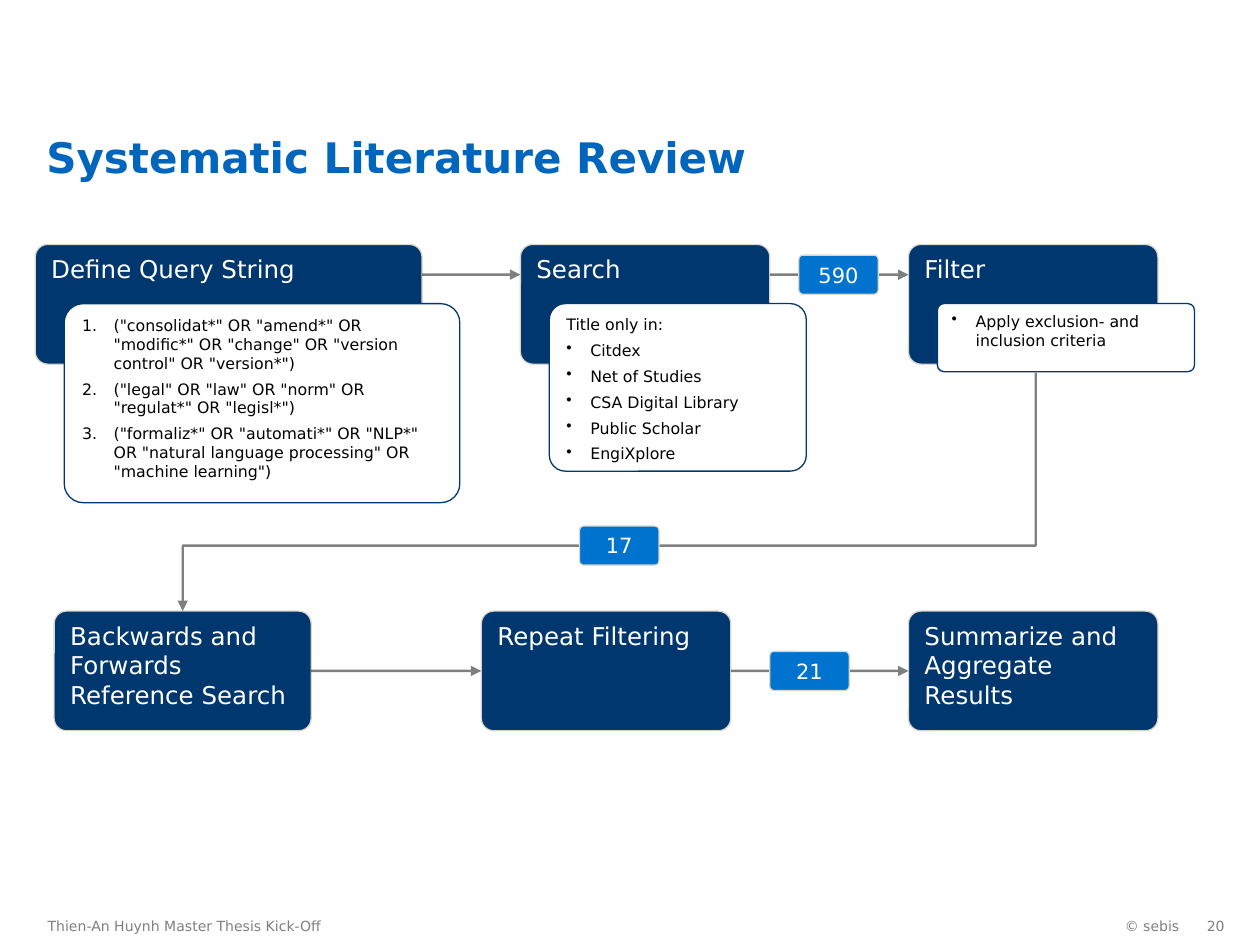
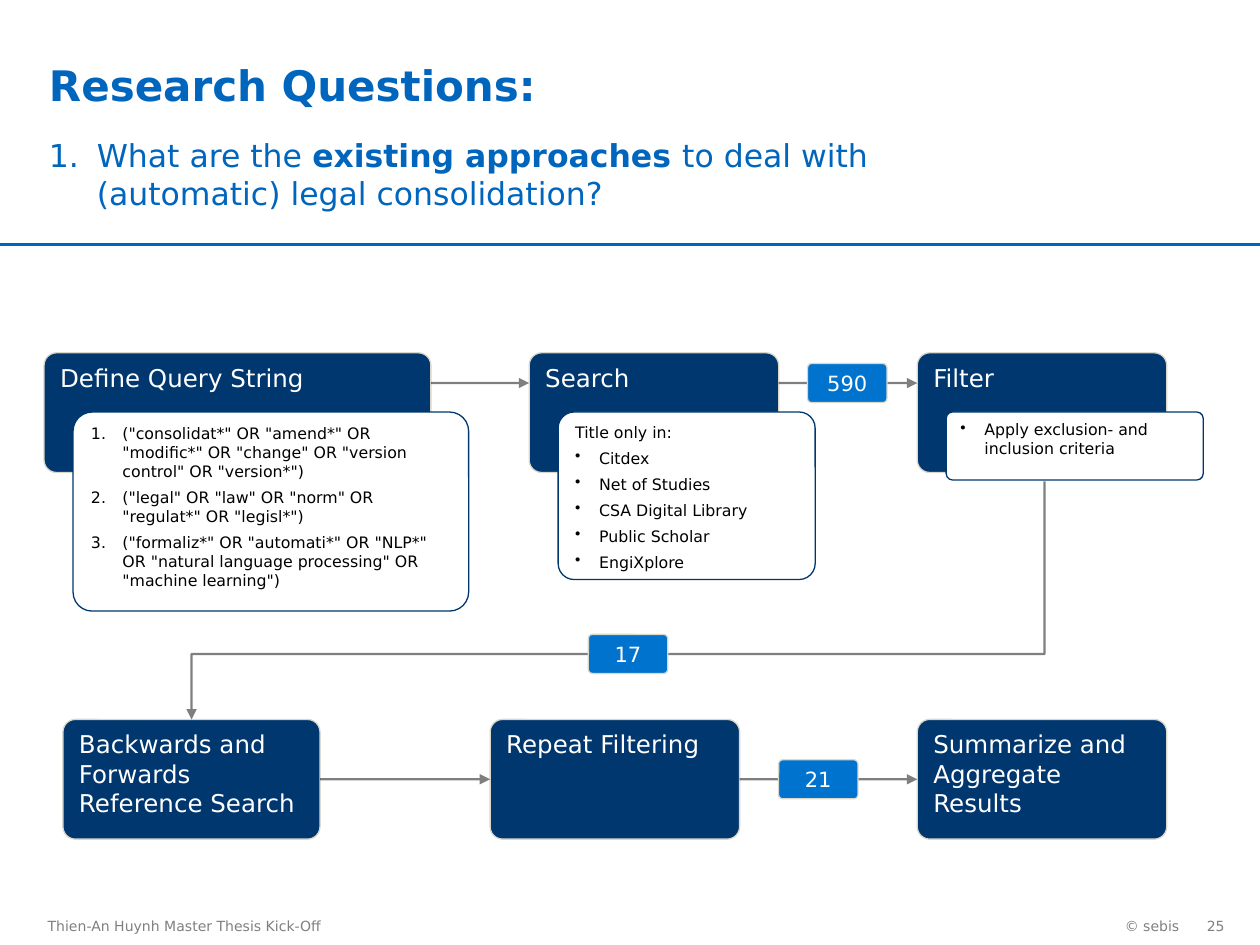
import pptx
import pptx.util
import pptx.dml.color
import pptx.enum.shapes
import pptx.enum.text
import pptx.oxml.ns
import lxml.etree

Inches = pptx.util.Inches
RGBColor = pptx.dml.color.RGBColor
ALIGN = pptx.enum.text.PP_ALIGN
ANCHOR = pptx.enum.text.MSO_ANCHOR
CONNECTOR = pptx.enum.shapes.MSO_CONNECTOR
ROUNDED = pptx.enum.shapes.MSO_SHAPE.ROUNDED_RECTANGLE
qn = pptx.oxml.ns.qn

FONT = "DejaVu Sans"
TITLE_BLUE = RGBColor(0x00, 0x65, 0xBD)
NAVY = RGBColor(0x00, 0x37, 0x6F)
BADGE_BLUE = RGBColor(0x00, 0x73, 0xCF)
SAND = RGBColor(0xDA, 0xD7, 0xCB)
GREY = RGBColor(0x80, 0x80, 0x80)
BLACK = RGBColor(0, 0, 0)
WHITE = RGBColor(0xFF, 0xFF, 0xFF)

# Diagram grid, measured from the top left corner of the first step
STEP_WIDTH, STEP_HEIGHT = 1.98, 0.95
LAST_COLUMN, COLUMN_PITCH = 6.93, 3.39
LOWER_ROW = 2.91
UPPER_FLOW, RETURN_FLOW = 0.24, 2.39
LOWER_FLOW = LOWER_ROW + STEP_HEIGHT / 2
NOTE_SHIFT = (0.23, 0.47)
NOTE_WIDTH = 2.04
BADGE_WIDTH, BADGE_HEIGHT = 0.63, 0.31

# Left, top, width, text
STEPS = [
    (0, 0, 3.07, "Define Query String"),
    (3.85, 0, STEP_WIDTH, "Search"),
    (LAST_COLUMN, 0, STEP_WIDTH, "Filter"),
    (LAST_COLUMN - 2 * COLUMN_PITCH, LOWER_ROW, NOTE_WIDTH, "Backwards and Forwards Reference Search"),
    (LAST_COLUMN - COLUMN_PITCH, LOWER_ROW, STEP_WIDTH, "Repeat Filtering"),
    (LAST_COLUMN, LOWER_ROW, STEP_WIDTH, "Summarize and Aggregate Results"),
]
# Width, height, indent, paragraphs as (mark, size, text); one note for each upper step
NOTES = [
    (3.14, 1.58, 0.25, [
        ("1.", 9, '("consolidat*" OR "amend*" OR "modific*" OR "change" OR "version control" OR "version*")'),
        ("1.", 9, '("legal" OR "law" OR "norm" OR "regulat*" OR "legisl*")'),
        ("1.", 9, '("formaliz*" OR "automati*" OR "NLP*" OR "natural language processing" OR "machine learning")'),
    ]),
    (NOTE_WIDTH, 1.33, 0.19, [("", 9, "Title only in:")] + [
        ("•", 9, source) for source in
        ("Citdex", "Net of Studies", "CSA Digital Library", "Public Scholar", "EngiXplore")
    ]),
    (NOTE_WIDTH, 0.54, 0.19, [("•", 9, "Apply exclusion- and inclusion criteria")]),
]
# Left, middle, text
BADGES = [(6.06, UPPER_FLOW, "590"), (4.32, RETURN_FLOW, "17"), (5.83, LOWER_FLOW, "21")]


def write(shape, paragraphs, *, colour, indent=0, after=None, spacing=None, align=ALIGN.LEFT,
          anchor=ANCHOR.TOP, insets=(0.1, 0.05, 0.1, 0.05), wrap=True):
    """Fill a shape with (mark, size, text) paragraphs; text between ** is bold."""
    frame = shape.text_frame
    frame.word_wrap = wrap
    frame.vertical_anchor = anchor
    frame.margin_left, frame.margin_top, frame.margin_right, frame.margin_bottom = map(Inches, insets)
    for index, (mark, size, text) in enumerate(paragraphs):
        paragraph = frame.add_paragraph() if index else frame.paragraphs[0]
        paragraph.alignment = align
        if mark:
            properties = paragraph._p.get_or_add_pPr()
            properties.set("marL", str(Inches(indent)))
            properties.set("indent", str(-Inches(indent)))
            if mark == "•":
                lxml.etree.SubElement(properties, qn("a:buChar"), char=mark)
            else:
                lxml.etree.SubElement(properties, qn("a:buAutoNum"), type="arabicPeriod")
        if after:
            paragraph.space_after = pptx.util.Pt(after)
        if spacing:
            paragraph.line_spacing = spacing
        for part_index, part in enumerate(text.split("**")):
            if part:
                run = paragraph.add_run()
                run.text = part
                run.font.name = FONT
                run.font.size = pptx.util.Pt(size)
                run.font.bold = part_index % 2 == 1
                run.font.color.rgb = colour


def draw_line(slide, start, end, colour, kind=CONNECTOR.STRAIGHT, arrow=True):
    """Draw a solid line, or a half-transparent arrow."""
    line = slide.shapes.add_connector(kind, *map(Inches, start + end))
    line.line.width = pptx.util.Pt(1.35)
    line.line.color.rgb = colour
    if arrow:
        outline = line.line._get_or_add_ln()
        lxml.etree.SubElement(next(outline.iter(qn("a:srgbClr"))), qn("a:alpha"), val="50000")
        lxml.etree.SubElement(outline, qn("a:tailEnd"), type="triangle")
    lxml.etree.SubElement(line._element.spPr, qn("a:effectLst"))
    return line


presentation = pptx.Presentation()
presentation.slide_width, presentation.slide_height = Inches(10), Inches(7.5)

for number, left, top in (("20", 0.28, 1.94), ("25", 0.35, 2.8)):
    slide = presentation.slides.add_slide(presentation.slide_layouts[6])

    # Footer
    for text, box_left, width, align, inset_right, wrap in (
        ("© sebis", 7.7, 1.76, ALIGN.RIGHT, 0.1, False),
        (number, 9.45, 0.27, ALIGN.RIGHT, 0, False),
        ("Thien-An Huynh Master Thesis Kick-Off", 0.28, 4.73, ALIGN.LEFT, 0.1, True),
    ):
        box = slide.shapes.add_textbox(*map(Inches, (box_left, 7.19, width, 0.32)))
        write(box, [("", 8, text)], colour=GREY, align=align, anchor=ANCHOR.MIDDLE,
              insets=(0.1, 0.05, inset_right, 0.05), wrap=wrap)

    # Heading
    if number == "20":
        title = slide.shapes.add_textbox(*map(Inches, (0.27, 0.84, 9.45, 5.62)))
        write(title, [("", 24, "**Systematic Literature Review**")], colour=TITLE_BLUE,
              spacing=1.5, insets=(0.1, 0, 0.1, 0))
    else:
        title = slide.shapes.add_textbox(*map(Inches, (0.29, 0.42, 7.15, 1.83)))
        write(title, [
            ("", 24, "**Research Questions:**"),
            ("1.", 18, "What are the **existing approaches **to deal with (automatic) legal consolidation?"),
        ], colour=TITLE_BLUE, indent=0.38, after=15)
        draw_line(slide, (0, 1.94), (10, 1.94), TITLE_BLUE, arrow=False)

    # Steps, each upper one followed by its note
    panels = []
    for index, (x, y, width, text) in enumerate(STEPS):
        panels.append((x, y, width, STEP_HEIGHT, 0.104, NAVY, SAND,
                       [("", 14, text)], dict(colour=WHITE)))
        if index < len(NOTES):
            note_width, note_height, indent, paragraphs = NOTES[index]
            panels.append((x + NOTE_SHIFT[0], y + NOTE_SHIFT[1], note_width, note_height, 0.096,
                           WHITE, NAVY, paragraphs, dict(colour=BLACK, indent=indent, after=4)))
    badge_start = len(panels)
    for x, middle, text in BADGES:
        panels.append((x, middle - BADGE_HEIGHT / 2, BADGE_WIDTH, BADGE_HEIGHT, 0.104,
                       BADGE_BLUE, SAND, [("", 12, text)],
                       dict(colour=WHITE, align=ALIGN.CENTER, anchor=ANCHOR.MIDDLE)))

    lower_steps = []
    for index, (x, y, width, height, rounding, fill, border, paragraphs, style) in enumerate(panels):
        # Arrows lie above the steps and below the badges
        if index == badge_start:
            start_x, start_y = left + 7.94, top + 1.02
            end_x, end_y = left + 1.17, top + LOWER_ROW
            drop, run_length = end_y - start_y, start_x - end_x
            bend = draw_line(slide, (0, 0), (drop, run_length), BLACK, CONNECTOR.ELBOW)
            bend.left = Inches((start_x + end_x - drop) / 2)
            bend.top = Inches((start_y + end_y - run_length) / 2)
            bend._element.spPr.find(qn("a:xfrm")).set("rot", "5400000")
            geometry = bend._element.spPr.find(qn("a:prstGeom"))
            adjustments = geometry.find(qn("a:avLst"))
            if adjustments is None:
                adjustments = lxml.etree.SubElement(geometry, qn("a:avLst"))
            share = (RETURN_FLOW - 1.02) / drop
            lxml.etree.SubElement(adjustments, qn("a:gd"), name="adj1", fmla=f"val {round(share * 100000)}")

            for step, following in zip(STEPS[:2], STEPS[1:3]):
                draw_line(slide, (left + step[0] + step[2], top + UPPER_FLOW),
                          (left + following[0], top + UPPER_FLOW), BLACK)
            for step, following in zip(lower_steps, lower_steps[1:]):
                arrow = draw_line(slide, (left, top), (left, top), BLACK)
                arrow.begin_connect(step, 3)
                arrow.end_connect(following, 1)

        panel = slide.shapes.add_shape(ROUNDED, *map(Inches, (left + x, top + y, width, height)))
        panel.shadow.inherit = False
        panel.adjustments[0] = rounding
        panel.fill.solid()
        panel.fill.fore_color.rgb = fill
        panel.line.color.rgb = border
        panel.line.width = pptx.util.Pt(0.75)
        write(panel, paragraphs, **style)
        if y == LOWER_ROW:
            lower_steps.append(panel)

presentation.save("out.pptx")
